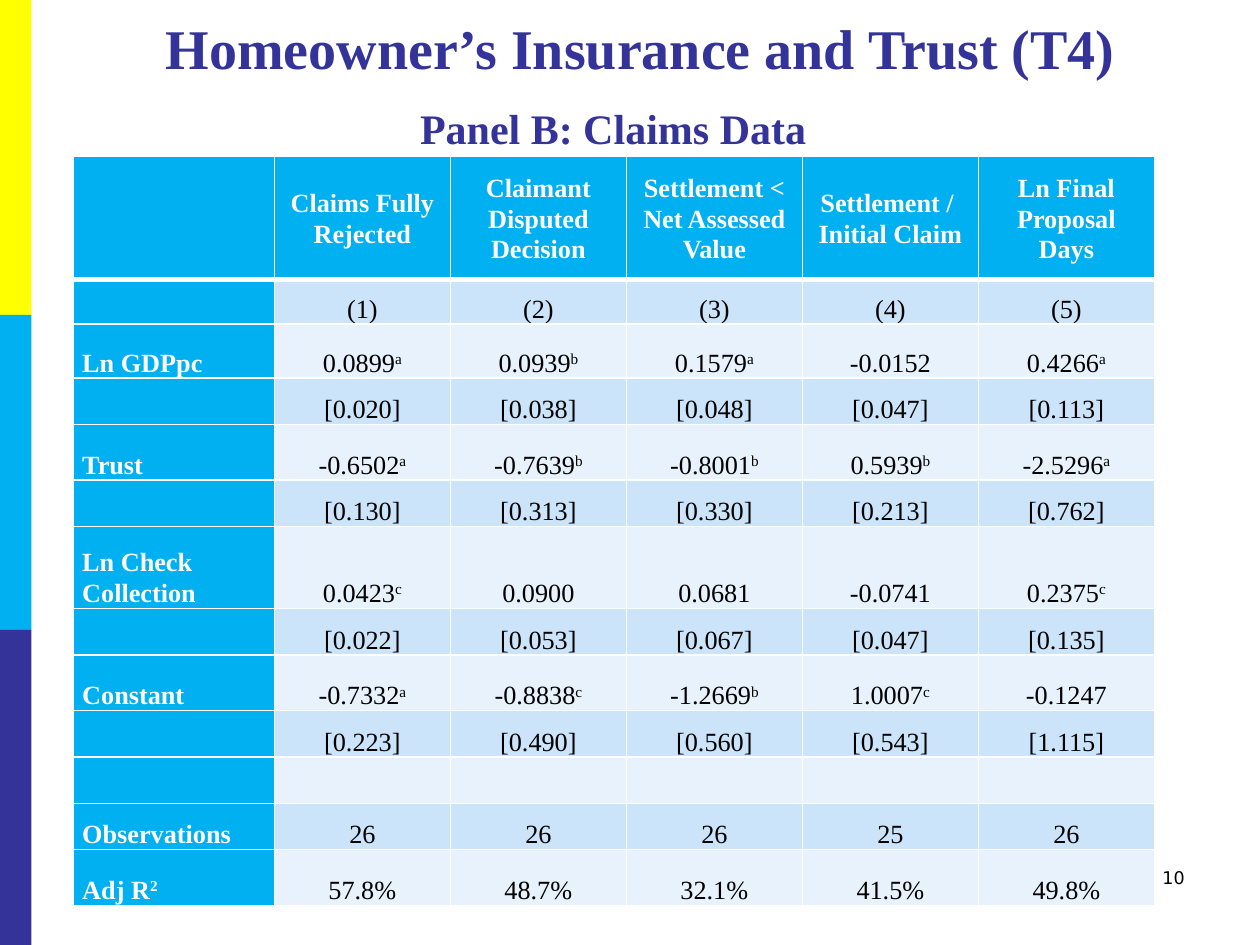
"""Build the slide of claims regressions on homeowner's insurance and trust."""
import pptx
import pptx.dml.color
import pptx.enum.shapes
import pptx.enum.text
import pptx.oxml
import pptx.oxml.ns
import pptx.util

Pt = pptx.util.Pt
ALIGN = pptx.enum.text.PP_ALIGN
ANCHOR = pptx.enum.text.MSO_ANCHOR

SERIF = "Times New Roman"
NAVY, SKY, YELLOW, WHITE, BLACK = "333399", "00B0F0", "FFFF00", "FFFFFF", "000000"
BANDS = ("E7F2FC", "CCE4F9")

HEADING = "Homeowner’s Insurance and Trust (T4)"
PANEL = "Panel B: Claims Data"
PAGE = "10"
STRIPES = [YELLOW, SKY, NAVY]
COLUMN_WIDTHS = [114.8] + [100.6] * 5
ROWS = [
    (70.4, ["", "Claims Fully Rejected", "Claimant Disputed Decision",
            "Settlement < Net Assessed Value", "Settlement / \vInitial Claim",
            "Ln Final Proposal Days"]),
    (25.2, ["", "(1)", "(2)", "(3)", "(4)", "(5)"]),
    (31, ["Ln GDPpc", "0.0899^a", "0.0939^b", "0.1579^a", "-0.0152", "0.4266^a"]),
    (26.5, ["", "[0.020]", "[0.038]", "[0.048]", "[0.047]", "[0.113]"]),
    (31.9, ["Trust", "-0.6502^a", "-0.7639^b", "-0.8001^b", "0.5939^b", "-2.5296^a"]),
    (26.5, ["", "[0.130]", "[0.313]", "[0.330]", "[0.213]", "[0.762]"]),
    (46.8, ["Ln Check Collection", "0.0423^c", "0.0900", "0.0681", "-0.0741", "0.2375^c"]),
    (26.5, ["", "[0.022]", "[0.053]", "[0.067]", "[0.047]", "[0.135]"]),
    (31.9, ["Constant", "-0.7332^a", "-0.8838^c", "-1.2669^b", "1.0007^c", "-0.1247"]),
    (26.5, ["", "[0.223]", "[0.490]", "[0.560]", "[0.543]", "[1.115]"]),
    (26.5, [""] * 6),
    (26.5, ["Observations", "26", "26", "26", "25", "26"]),
    (31.9, ["Adj R^2", "57.8%", "48.7%", "32.1%", "41.5%", "49.8%"]),
]


def rgb(code):
    return pptx.dml.color.RGBColor.from_string(code)


def style(run, size, color, bold=False, face=SERIF):
    run.font.size, run.font.bold, run.font.name = Pt(size), bold, face
    run.font.color.rgb = rgb(color)


def add_stripes(slide):
    for index, color in enumerate(STRIPES):
        stripe = slide.shapes.add_shape(
            pptx.enum.shapes.MSO_SHAPE.RECTANGLE, Pt(0), Pt(180 * index), Pt(18), Pt(180))
        stripe.shadow.inherit = False
        stripe.fill.solid()
        stripe.fill.fore_color.rgb = rgb(color)
        stripe.line.fill.background()


def write_title(slide):
    title = slide.shapes.title
    title.left, title.top, title.width, title.height = Pt(24), Pt(12), Pt(684), Pt(68.4)
    frame = title.text_frame
    frame.auto_size = pptx.enum.text.MSO_AUTO_SIZE.NONE
    frame.vertical_anchor = ANCHOR.MIDDLE
    frame.text = f"{HEADING}\v{PANEL}"
    lines = frame.paragraphs[0]
    lines.alignment = ALIGN.CENTER
    lines.line_spacing = 1.12
    lines.add_run().text = "\t"
    for run, size, bold in zip(lines.runs, (32, 24, 32), (True, True, False)):
        style(run, size, NAVY, bold)


def write_page_number(slide):
    box = slide.shapes.add_textbox(Pt(516), Pt(492), Pt(168), Pt(36))
    box.text_frame.word_wrap = True
    box.text_frame.text = PAGE
    number = box.text_frame.paragraphs[0]
    number.alignment = ALIGN.RIGHT
    style(number.runs[0], 10, BLACK, face="DejaVu Sans")


def set_borders(cell, row):
    properties = cell._tc.get_or_add_tcPr()
    for index, side in enumerate("LRTB"):
        width = 3 if (row, side) in ((0, "B"), (1, "T")) else 1
        border = pptx.oxml.parse_xml(
            f'<a:ln{side} {pptx.oxml.ns.nsdecls("a")} w="{Pt(width)}"><a:solidFill>'
            f'<a:srgbClr val="{WHITE}"/></a:solidFill></a:ln{side}>')
        properties.insert(index, border)


def fill_cell(cell, text, row, column):
    labelled = row == 0 or column == 0
    cell.fill.solid()
    cell.fill.fore_color.rgb = rgb(SKY if labelled else BANDS[row % 2])
    set_borders(cell, row)
    cell.margin_left = cell.margin_right = Pt(5)
    cell.margin_top = cell.margin_bottom = Pt(0)
    cell.vertical_anchor = ANCHOR.MIDDLE if row == 0 else ANCHOR.BOTTOM
    value, _, mark = text.partition("^")
    entry = cell.text_frame.paragraphs[0]
    entry.text = value
    entry.alignment = ALIGN.CENTER if column else ALIGN.LEFT
    entry.line_spacing = 1.07
    if mark:
        superscript = entry.add_run()
        superscript.text = mark
        superscript.font._element.set("baseline", "30000")
    for run in entry.runs:
        style(run, 15, WHITE if labelled else BLACK, labelled)


def add_results(slide):
    heights = [height for height, _ in ROWS]
    results = slide.shapes.add_table(
        len(ROWS), len(COLUMN_WIDTHS), Pt(42), Pt(89.5),
        Pt(sum(COLUMN_WIDTHS)), Pt(sum(heights))).table
    for column, width in zip(results.columns, COLUMN_WIDTHS):
        column.width = Pt(width)
    for row, (height, texts) in enumerate(ROWS):
        results.rows[row].height = Pt(height)
        for column, text in enumerate(texts):
            fill_cell(results.cell(row, column), text, row, column)


def main():
    deck = pptx.Presentation()
    deck.slide_width, deck.slide_height = Pt(720), Pt(540)
    slide = deck.slides.add_slide(deck.slide_layouts.get_by_name("Title Only"))
    add_stripes(slide)
    write_title(slide)
    write_page_number(slide)
    add_results(slide)
    deck.save("out.pptx")


if __name__ == "__main__":
    main()
